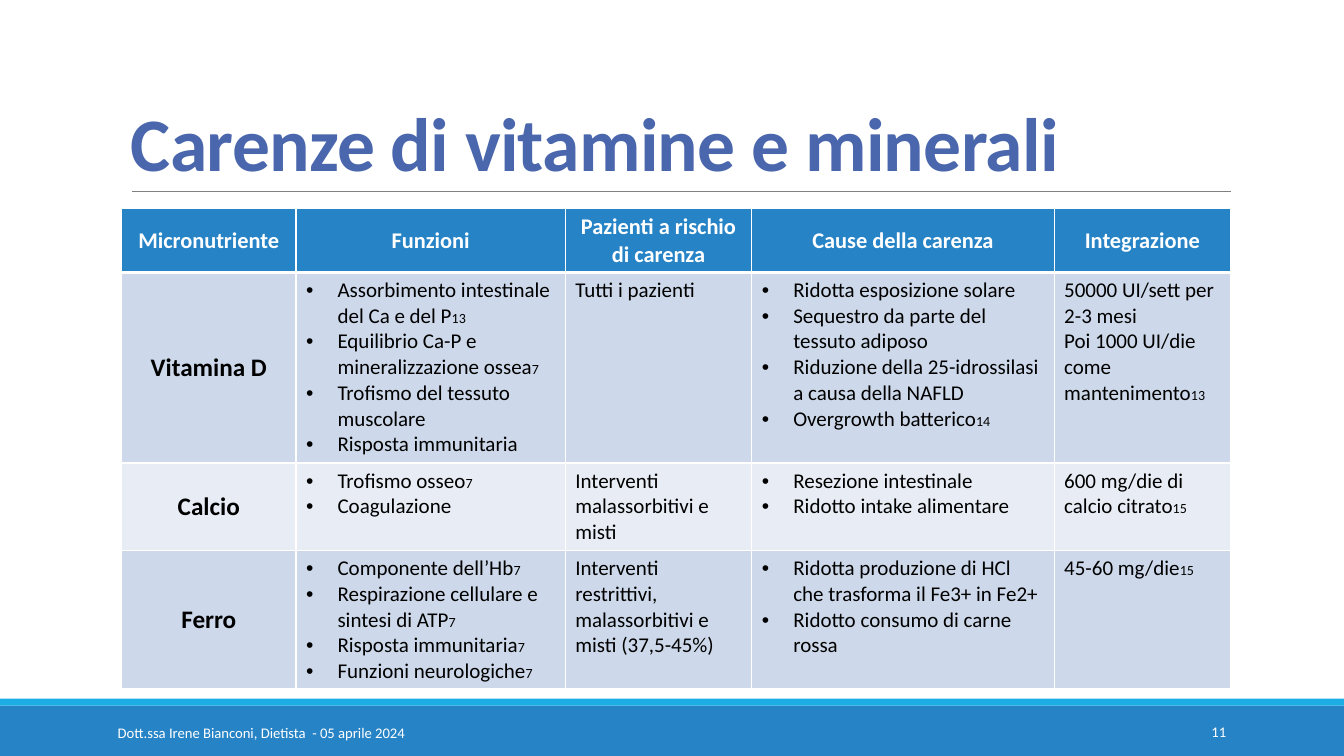
from lxml import etree
from pptx import Presentation
from pptx.dml.color import RGBColor
from pptx.enum.shapes import MSO_CONNECTOR, MSO_SHAPE
from pptx.enum.text import MSO_ANCHOR, PP_ALIGN
from pptx.oxml.ns import qn
from pptx.util import Pt

LEFT, CENTER, RIGHT = PP_ALIGN.LEFT, PP_ALIGN.CENTER, PP_ALIGN.RIGHT
TOP, MIDDLE, BOTTOM = MSO_ANCHOR.TOP, MSO_ANCHOR.MIDDLE, MSO_ANCHOR.BOTTOM
RECT, LINE = MSO_SHAPE.RECTANGLE, MSO_CONNECTOR.STRAIGHT
FONT = "Calibri"
WHITE, BLACK, BLUE, CYAN = "FFFFFF", "000000", "2683C6", "1CADE4"
INDIGO, GREY = "4A66AC", "808080"
BANDS = ["CDD9EA", "E8EDF5"]

WIDTHS = [124.5, 192.4, 133.2, 216, 126]
HEIGHTS = [45, 136.2, 62.6, 98.6]
LISTS = {1, 3}  # bulleted columns
HEADS = ["Micronutriente", "Funzioni", "Pazienti a rischio di carenza",
         "Cause della carenza", "Integrazione"]
# Text after ^ is a small reference number; each cell is a list of paragraphs.
ROWS = [
    [["Vitamina D"],
     ["Assorbimento intestinale del Ca e del P^13",
      "Equilibrio Ca-P e mineralizzazione ossea^7",
      "Trofismo del tessuto muscolare", "Risposta immunitaria"],
     ["Tutti i pazienti"],
     ["Ridotta esposizione solare", "Sequestro da parte del tessuto adiposo",
      "Riduzione della 25-idrossilasi a causa della NAFLD",
      "Overgrowth batterico^14"],
     ["50000 UI/sett per 2-3 mesi", "Poi 1000 UI/die come mantenimento^13"]],
    [["Calcio"],
     ["Trofismo osseo^7", "Coagulazione"],
     ["Interventi malassorbitivi e misti"],
     ["Resezione intestinale", "Ridotto intake alimentare"],
     ["600 mg/die di calcio citrato^15"]],
    [["Ferro"],
     ["Componente dell’Hb^7", "Respirazione cellulare e sintesi di ATP^7",
      "Risposta immunitaria^7", "Funzioni neurologiche^7"],
     ["Interventi restrittivi, malassorbitivi e misti (37,5-45%)"],
     ["Ridotta produzione di HCl che trasforma il Fe3+ in Fe2+",
      "Ridotto consumo di carne rossa"],
     ["45-60 mg/die^15"]],
]


def color(code):
    return RGBColor.from_string(code)


def put(item, values):
    for name, value in values.items():
        setattr(item, name, value)


def paint(item, code):
    item.fill.solid()
    item.fill.fore_color.rgb = color(code)


def add_run(para, text, size, code, bold=False):
    run = para.add_run()
    run.text = text
    put(run.font, {"name": FONT, "size": Pt(size), "bold": bold})
    run.font.color.rgb = color(code)
    return run


def add_bar(slide, top, height, code):
    bar = slide.shapes.add_shape(RECT, 0, Pt(top), Pt(960), Pt(height))
    bar.shadow.inherit = False
    paint(bar, code)
    bar.line.fill.background()


def add_rule(slide, left, right, top):
    rule = slide.shapes.add_connector(LINE, Pt(left), Pt(top), Pt(right), Pt(top))
    rule.line.color.rgb = color(GREY)
    rule.line.width = Pt(0.5)
    etree.SubElement(rule.element.spPr, qn("a:effectLst"))


def add_text(slide, box, text, size, code, align=LEFT, anchor=TOP, bold=False):
    frame = slide.shapes.add_textbox(*map(Pt, box)).text_frame
    put(frame, {"word_wrap": True, "vertical_anchor": anchor})
    para = frame.paragraphs[0]
    para.alignment = align
    return para, add_run(para, text, size, code, bold)


def add_title(slide, text):
    para, run = add_text(slide, (86.4, 22.4, 792, 114.4), text, 54, INDIGO,
                         anchor=BOTTOM, bold=True)
    para.line_spacing = 0.85
    run.font._element.set("spc", "-50")


def add_bullet(para):
    props = para._p.get_or_add_pPr()
    props.set("marL", str(Pt(22.5)))
    props.set("indent", str(-Pt(22.5)))
    etree.SubElement(props, qn("a:buFont"), typeface="Arial")
    etree.SubElement(props, qn("a:buChar"), char="•")


def add_edges(cell, widths):
    """Draw white borders; widths are for left, right, top and bottom."""
    props = cell._tc.get_or_add_tcPr()
    for side, width in zip("LRTB", widths):
        edge = etree.SubElement(props, qn("a:ln" + side), w=str(Pt(width)))
        fill = etree.SubElement(edge, qn("a:solidFill"))
        etree.SubElement(fill, qn("a:srgbClr"), val=WHITE)


def fill_cell(cell, lines, size, code, label, listed):
    """Write paragraphs; label means bold and centred in the cell."""
    cell.vertical_anchor = MIDDLE if label else TOP
    frame = cell.text_frame
    for i, line in enumerate(lines):
        para = frame.add_paragraph() if i else frame.paragraphs[0]
        para.alignment = CENTER if label else LEFT
        if listed:
            add_bullet(para)
        text, _, ref = line.partition("^")
        add_run(para, text, size, code, label)
        if ref:
            add_run(para, ref, 10, code)


def add_grid(slide):
    shape = slide.shapes.add_table(len(HEIGHTS), len(WIDTHS), Pt(86.9), Pt(149),
                                   Pt(sum(WIDTHS)), Pt(sum(HEIGHTS)))
    table = shape.table
    table.horz_banding = False
    for col, width in zip(table.columns, WIDTHS):
        col.width = Pt(width)
    for row, height in zip(table.rows, HEIGHTS):
        row.height = Pt(height)
    for r, texts in enumerate([[[head] for head in HEADS]] + ROWS):
        for c, lines in enumerate(texts):
            cell = table.cell(r, c)
            add_edges(cell, (1, 1, 3 if r == 1 else 1, 3 if r == 0 else 1))
            if r == 0:
                paint(cell, BLUE)
                fill_cell(cell, lines, 16, WHITE, True, False)
            else:
                paint(cell, BANDS[(r - 1) % 2])
                fill_cell(cell, lines, 15 if c else 18, BLACK, c == 0, c in LISTS)


def main():
    deck = Presentation()
    put(deck, {"slide_width": Pt(960), "slide_height": Pt(540)})
    slide = deck.slides.add_slide(deck.slide_layouts[6])
    add_bar(slide, 504, 36, BLUE)
    add_bar(slide, 499, 5, CYAN)
    add_rule(slide, 94.3, 879, 136.8)
    add_text(slide, (780, 508.5, 103, 28.8), "11", 10.5, WHITE, RIGHT, MIDDLE)
    add_title(slide, "Carenze di vitamine e minerali")
    add_grid(slide)
    add_text(slide, (77, 513.2, 555, 20),
             "Dott.ssa Irene Bianconi, Dietista  - 05 aprile 2024", 10.5, WHITE)
    deck.save("out.pptx")


if __name__ == "__main__":
    main()
